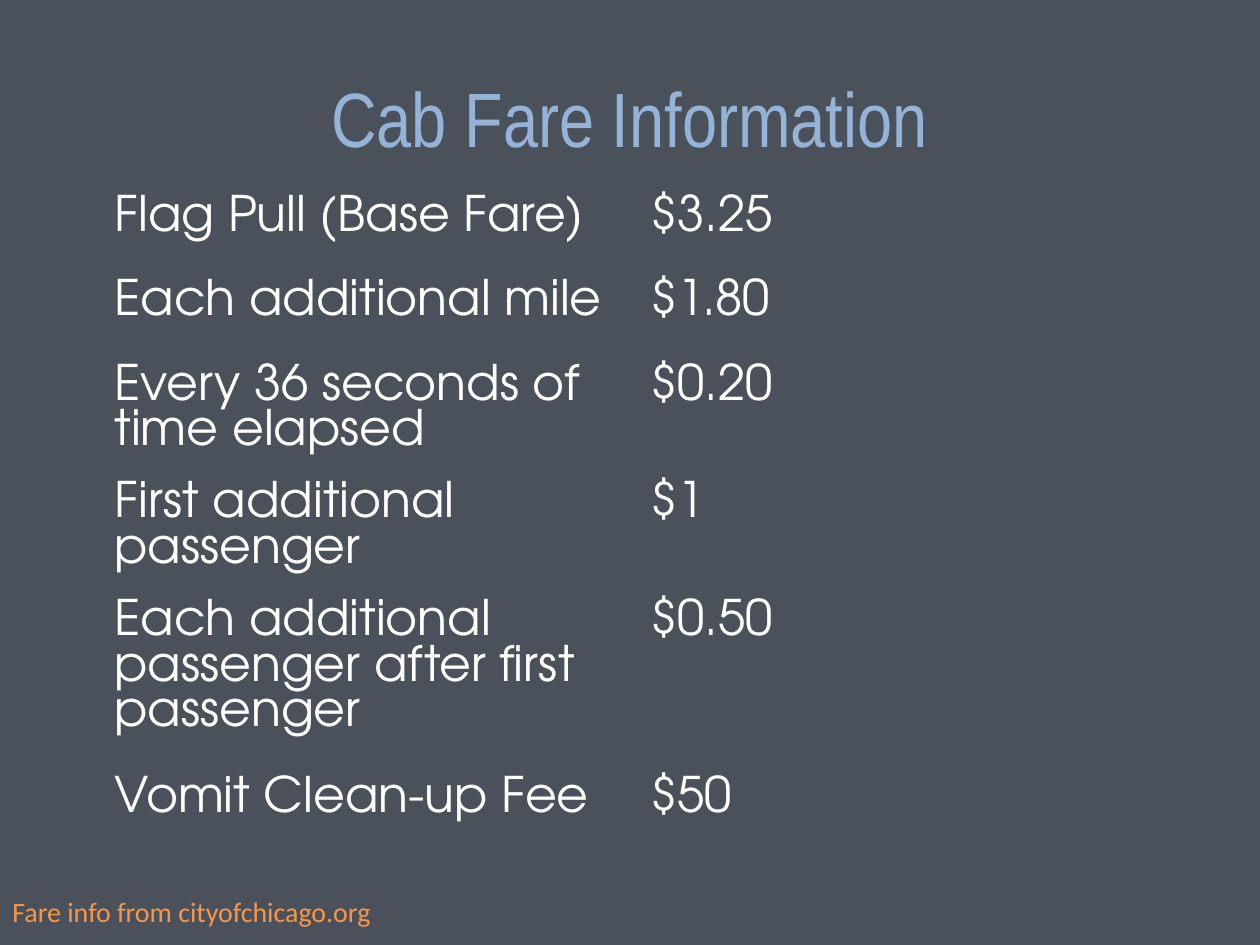
from dataclasses import dataclass

from pptx import Presentation
from pptx.dml.color import RGBColor
from pptx.enum.text import MSO_ANCHOR, PP_ALIGN
from pptx.util import Inches, Pt


@dataclass(frozen=True)
class Theme:
    """Colours, fonts and type sizes of the slide."""
    background: str = "4B515B"
    title_color: str = "95B3D7"
    fare_color: str = "FFFFFF"
    source_color: str = "F79646"
    title_font: str = "Arial Narrow"
    fare_font: str = "TeX Gyre Adventor"
    source_font: str = "Calibri"
    title_size: int = 44
    fare_size: int = 28
    source_size: int = 16


THEME = Theme()
NO_GRID_STYLE = "{2D5ABB26-0587-4C30-8999-92F81FD0307C}"
FARES = [
    ("Flag Pull (Base Fare)", "$3.25", 0.67),
    ("Each additional mile", "$1.80", 0.67),
    ("Every 36 seconds of time elapsed", "$0.20", 0.84),
    ("First additional passenger", "$1", 0.84),
    ("Each additional passenger after first passenger", "$0.50", 1.25),
    ("Vomit Clean-up Fee", "$50", 0.67),
    ("", "", 0.67),
]


def write_text(frame, text, *, font, size, color, align=PP_ALIGN.LEFT, space_after=0):
    """Write one formatted paragraph into a text frame."""
    frame.word_wrap = True
    paragraph = frame.paragraphs[0]
    paragraph.alignment = align
    paragraph.space_after = Pt(space_after)
    paragraph.font.size = Pt(size)
    if text:
        run = paragraph.add_run()
        run.text = text
        run.font.name = font
        run.font.size = Pt(size)
        run.font.color.rgb = RGBColor.from_string(color)


def add_title(slide, left, top, width, height):
    """Place the centred slide title in its box."""
    frame = slide.shapes.add_textbox(left, top, width, height).text_frame
    frame.vertical_anchor = MSO_ANCHOR.MIDDLE
    write_text(frame, "Cab Fare Information", font=THEME.title_font,
               size=THEME.title_size, color=THEME.title_color, align=PP_ALIGN.CENTER)


def add_fare_table(slide, left, top, width, height):
    """Place the two-column table of fares in its box."""
    graphic = slide.shapes.add_table(len(FARES), 2, left, top, width, height)
    fares = graphic.table
    fares.first_row = fares.horz_banding = False
    fares._tbl.tblPr.find("{*}tableStyleId").text = NO_GRID_STYLE
    for column in fares.columns:
        column.width = width // 2
    for row, (charge, price, row_height) in zip(fares.rows, FARES):
        row.height = Inches(row_height)
        for cell, text in zip(row.cells, (charge, price)):
            cell.fill.background()
            cell.margin_left = cell.margin_right = Inches(0.07)
            cell.margin_top = cell.margin_bottom = 0
            write_text(cell.text_frame, text, font=THEME.fare_font,
                       size=THEME.fare_size, color=THEME.fare_color, space_after=6)


def add_source(slide, left, top, width, height):
    """Place the source line in its box."""
    frame = slide.shapes.add_textbox(left, top, width, height).text_frame
    write_text(frame, "Fare info from cityofchicago.org", font=THEME.source_font,
               size=THEME.source_size, color=THEME.source_color)


def main():
    """Build and save the cab fare slide."""
    deck = Presentation()
    deck.slide_width, deck.slide_height = Inches(10), Inches(7.5)
    slide = deck.slides.add_slide(deck.slide_layouts[6])
    slide.background.fill.solid()
    slide.background.fill.fore_color.rgb = RGBColor.from_string(THEME.background)
    add_title(slide, Inches(0.5), Inches(0.3), Inches(9), Inches(1.25))
    add_fare_table(slide, Inches(0.84), Inches(1.55), Inches(8.51), Inches(6.02))
    add_source(slide, Inches(0), Inches(7.05), Inches(5.36), Inches(0.37))
    deck.save("out.pptx")


if __name__ == "__main__":
    main()
